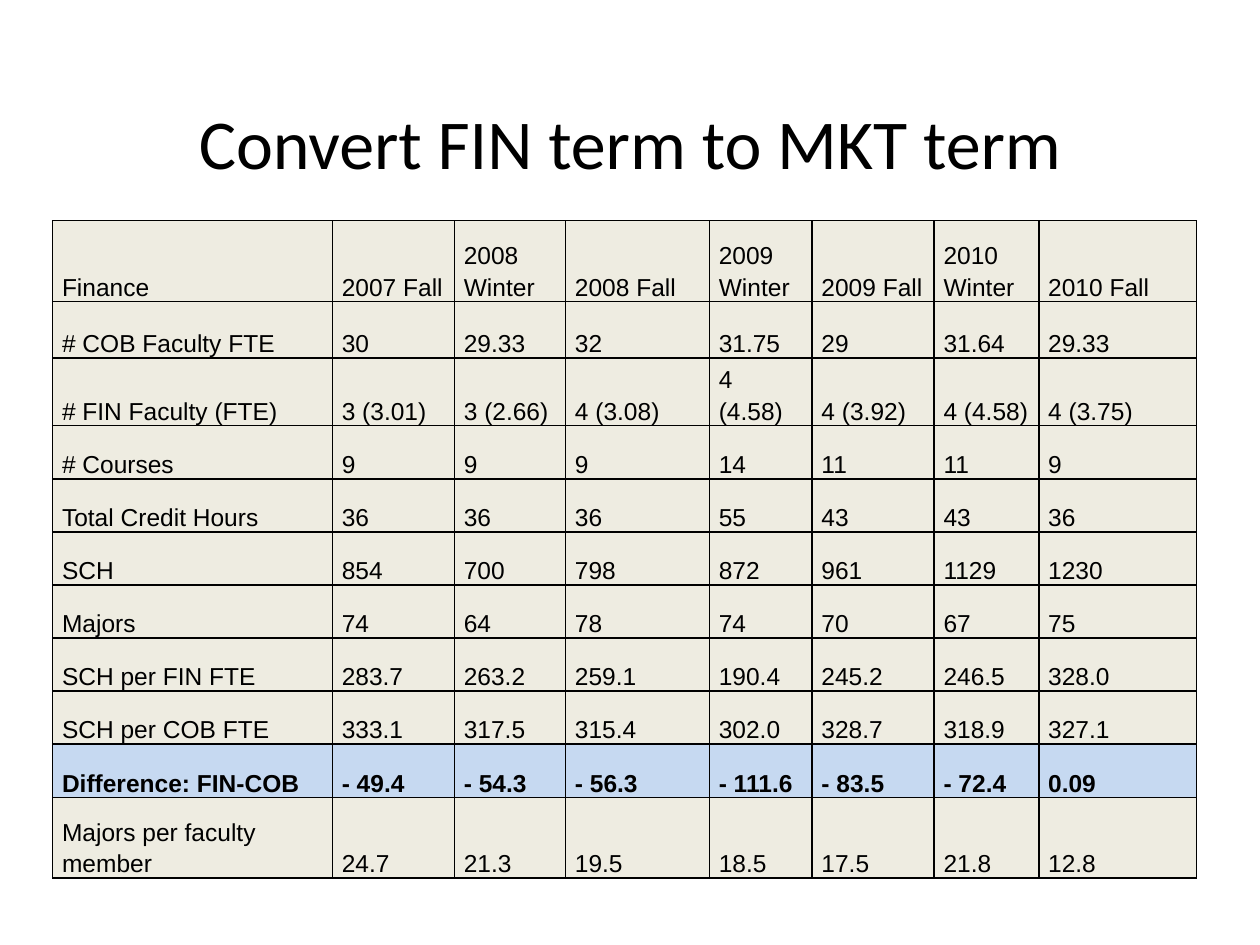
"""Build the finance term comparison slide."""
from lxml.etree import SubElement
from pptx import Presentation
from pptx.dml.color import RGBColor as Rgb
from pptx.enum.text import MSO_ANCHOR as Anchor, PP_ALIGN as Align
from pptx.oxml.ns import qn
from pptx.util import Cm, Pt

COLORS = {"text": "000000", "border": "000000", "body": "EEECE1", "highlight": "C6D9F1"}
COLUMN_WIDTHS = [5.64, 2.46, 2.24, 2.9, 2.07, 2.46, 2.11, 3.18]
ROW_HEIGHTS = [1.63, 1.14] + [1.07] * 8 + [1.63]
FINANCE = [
    ["Finance", "2007 Fall", "2008 Winter", "2008 Fall", "2009 Winter", "2009 Fall", "2010 Winter", "2010 Fall"],
    ["# COB Faculty FTE", "30", "29.33", "32", "31.75", "29", "31.64", "29.33"],
    ["# FIN Faculty (FTE)", "3 (3.01)", "3 (2.66)", "4 (3.08)", "4 (4.58)", "4 (3.92)", "4 (4.58)", "4 (3.75)"],
    ["# Courses", "9", "9", "9", "14", "11", "11", "9"],
    ["Total Credit Hours", "36", "36", "36", "55", "43", "43", "36"],
    ["SCH", "854", "700", "798", "872", "961", "1129", "1230"],
    ["Majors", "74", "64", "78", "74", "70", "67", "75"],
    ["SCH per FIN FTE", "283.7", "263.2", "259.1", "190.4", "245.2", "246.5", "328.0"],
    ["SCH per COB FTE", "333.1", "317.5", "315.4", "302.0", "328.7", "318.9", "327.1"],
    ["Difference: FIN-COB", "- 49.4", "- 54.3", "- 56.3", "- 111.6", "- 83.5", "- 72.4", "0.09"],
    ["Majors per faculty member", "24.7", "21.3", "19.5", "18.5", "17.5", "21.8", "12.8"],
]


def style_text(paragraph, font_name, size, bold=False):
    font = paragraph.runs[0].font
    font.name, font.size, font.bold = font_name, Pt(size), bold
    font.color.rgb = Rgb.from_string(COLORS["text"])


def add_borders(cell):
    properties = cell._tc.get_or_add_tcPr()
    for side in ("a:lnL", "a:lnR", "a:lnT", "a:lnB"):
        line = SubElement(properties, qn(side), w=str(Pt(1)))
        fill = SubElement(line, qn("a:solidFill"))
        SubElement(fill, qn("a:srgbClr"), val=COLORS["border"])


deck = Presentation()
deck.slide_width, deck.slide_height = Cm(25.4), Cm(19.05)
slide = deck.slides.add_slide(deck.slide_layouts[6])

title = slide.shapes.add_textbox(Cm(1.27), Cm(1.27), Cm(22.86), Cm(3.18)).text_frame
title.word_wrap = True
title.vertical_anchor = Anchor.MIDDLE
title.text = "Convert FIN term to MKT term"
title.paragraphs[0].alignment = Align.CENTER
style_text(title.paragraphs[0], "Calibri", 40)

terms = slide.shapes.add_table(
    len(FINANCE), len(COLUMN_WIDTHS), Cm(1.06), Cm(4.45),
    Cm(sum(COLUMN_WIDTHS)), Cm(sum(ROW_HEIGHTS))).table
terms.first_row = terms.horz_banding = False
for column, width in zip(terms.columns, COLUMN_WIDTHS):
    column.width = Cm(width)

for row, height, values in zip(terms.rows, ROW_HEIGHTS, FINANCE):
    row.height = Cm(height)
    is_difference = values[0].startswith("Difference")
    for cell, value in zip(row.cells, values):
        cell.margin_left = cell.margin_right = Cm(0.19)
        cell.margin_top = cell.margin_bottom = Cm(0)
        cell.vertical_anchor = Anchor.BOTTOM
        add_borders(cell)
        cell.fill.solid()
        cell.fill.fore_color.rgb = Rgb.from_string(COLORS["highlight" if is_difference else "body"])
        cell.text_frame.text = value
        paragraph = cell.text_frame.paragraphs[0]
        paragraph.line_spacing = 1.15
        style_text(paragraph, "Arial", 14, is_difference)

deck.save("out.pptx")
